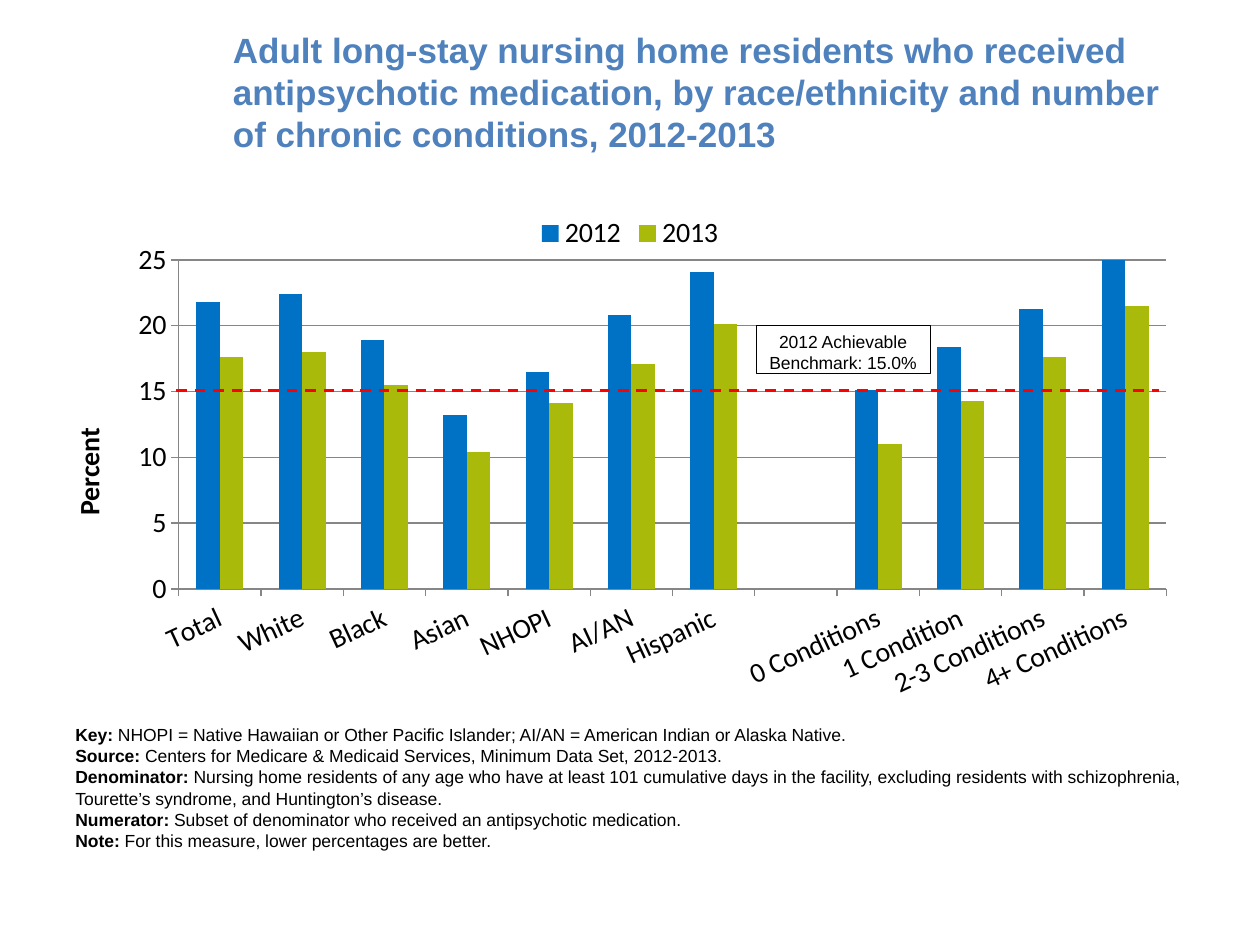
from lxml import etree
from pptx import Presentation
from pptx.chart.data import CategoryChartData
from pptx.dml.color import RGBColor
from pptx.enum import chart as ch, dml, shapes, text
from pptx.oxml import parse_xml
from pptx.oxml.ns import nsdecls, qn
from pptx.util import Inches, Pt

BLACK = RGBColor(0x00, 0x00, 0x00)
WHITE = RGBColor(0xFF, 0xFF, 0xFF)
GRAY = RGBColor(0x86, 0x86, 0x86)
RED = RGBColor(0xFF, 0x00, 0x00)
TITLE_BLUE = RGBColor(0x4F, 0x81, 0xBD)
BAR_BLUE = RGBColor(0x00, 0x72, 0xC6)
BAR_GREEN = RGBColor(0xAA, 0xBA, 0x0A)

CATEGORIES = ["Total", "White", "Black", "Asian", "NHOPI", "AI/AN", "Hispanic", "",
              "0 Conditions", "1 Condition", "2-3 Conditions", "4+ Conditions"]
SERIES = [
    ("2012", BAR_BLUE, [21.8, 22.4, 18.9, 13.2, 16.5, 20.8, 24.1, None, 15.1, 18.4, 21.3, 26]),
    ("2013", BAR_GREEN, [17.6, 18, 15.5, 10.4, 14.1, 17.1, 20.1, None, 11, 14.3, 17.6, 21.5]),
]
PLOT_LAYOUT = {"x": 0.102, "y": 0.113, "w": 0.871, "h": 0.637}

TITLE = ("Adult long-stay nursing home residents who received antipsychotic medication, "
         "by race/ethnicity and number of chronic conditions, 2012-2013")
NOTES = [
    ("Key:", " NHOPI = Native Hawaiian or Other Pacific Islander; "
             "AI/AN = American Indian or Alaska Native."),
    ("Source:", " Centers for Medicare & Medicaid Services, Minimum Data Set, 2012-2013."),
    ("Denominator: ", "Nursing home residents of any age who have at least 101 cumulative days "
                      "in the facility, excluding residents with schizophrenia, "
                      "Tourette’s syndrome, and Huntington’s disease."),
    ("Numerator:", " Subset of denominator who received an antipsychotic medication."),
    ("Note: ", "For this measure, lower percentages are better."),
]


def style_font(font, size, color=BLACK, bold=False, name="Arial"):
    """Set the look of a font."""
    font.name, font.size, font.bold = name, Pt(size), bold
    font.color.rgb = color


def add_run(p, words, size, color=BLACK, bold=False):
    """Add one styled run to a paragraph."""
    r = p.add_run()
    r.text = words
    style_font(r.font, size, color, bold)


def add_box(s, left, top, width, height, anchor=text.MSO_ANCHOR.TOP):
    """Add a wrapping text box and return its text frame."""
    sp = s.shapes.add_textbox(Inches(left), Inches(top), Inches(width), Inches(height))
    tf = sp.text_frame
    tf.word_wrap = True
    tf.vertical_anchor = anchor
    return tf


def add_notes(s):
    """Add the key, source and definitions below the chart."""
    tf = add_box(s, 0.5, 5.7, 9, 1.11)
    for i, (label, words) in enumerate(NOTES):
        p = tf.paragraphs[0] if i == 0 else tf.add_paragraph()
        add_run(p, label, 10, bold=True)
        add_run(p, words, 10)


def set_plot_layout(chart):
    """Fix the inner plot area as fractions of the chart."""
    area = chart.plots[0]._element.getparent()
    for old in area.findall(qn("c:layout")):
        area.remove(old)
    layout = parse_xml(f"<c:layout {nsdecls('c')}><c:manualLayout/></c:layout>")
    values = {"layoutTarget": "inner", "xMode": "edge", "yMode": "edge", **PLOT_LAYOUT}
    for tag, val in values.items():
        etree.SubElement(layout[0], qn(f"c:{tag}")).set("val", str(val))
    area.insert(0, layout)


def style_axes(chart):
    """Format both axes, the gridlines and the axis title."""
    cat, val = chart.category_axis, chart.value_axis
    for axis in (cat, val):
        style_font(axis.tick_labels.font, 16, name="Calibri")
        axis.format.line.color.rgb = GRAY
        axis.major_tick_mark = ch.XL_TICK_MARK.OUTSIDE
    cat.tick_labels.font._element.getparent().getparent().getparent().find(
        qn("a:bodyPr")).set("rot", "-1500000")
    val.minimum_scale, val.maximum_scale, val.major_unit = 0, 25, 5
    val.tick_labels.number_format = "0"
    val.tick_labels.number_format_is_linked = False
    val.major_gridlines.format.line.color.rgb = GRAY
    r = val.axis_title.text_frame.paragraphs[0].add_run()
    r.text = "Percent"
    style_font(r.font, 16, bold=True, name="Calibri")


def add_bar_chart(s):
    """Add the clustered columns for both years."""
    data = CategoryChartData()
    data.categories = CATEGORIES
    for name, _, values in SERIES:
        data.add_series(name, values)
    chart = s.shapes.add_chart(ch.XL_CHART_TYPE.COLUMN_CLUSTERED, Inches(0.5), Inches(1.6),
                               Inches(9), Inches(4.1), data).chart
    style_font(chart.font, 10)
    chart.has_title = False
    chart.has_legend = True
    chart.legend.position = ch.XL_LEGEND_POSITION.TOP
    chart.legend.include_in_layout = False
    style_font(chart.legend.font, 16, name="Calibri")
    plot = chart.plots[0]
    plot.gap_width, plot.overlap, plot.vary_by_categories = 150, 0, False
    for series, (_, color, _) in zip(plot.series, SERIES):
        series.format.fill.solid()
        series.format.fill.fore_color.rgb = color
        series.invert_if_negative = False
    style_axes(chart)
    set_plot_layout(chart)


def add_benchmark(s):
    """Add the dashed benchmark line and its label."""
    line = s.shapes.add_connector(shapes.MSO_CONNECTOR.STRAIGHT, Inches(1.4), Inches(3.1),
                                  Inches(9.2), Inches(3.1))
    line.line.color.rgb = RED
    line.line.width = Pt(1.5)
    line.line.dash_style = dml.MSO_LINE.DASH
    etree.SubElement(line._element.spPr, qn("a:effectLst"))
    sp = s.shapes.add_shape(shapes.MSO_SHAPE.RECTANGLE, Inches(6), Inches(2.58),
                            Inches(1.38), Inches(0.38))
    sp.shadow.inherit = False
    sp.fill.solid()
    sp.fill.fore_color.rgb = WHITE
    sp.line.color.rgb = BLACK
    sp.line.width = Pt(0.25)
    tf = sp.text_frame
    tf.word_wrap = True
    tf.vertical_anchor = text.MSO_ANCHOR.TOP
    p = tf.paragraphs[0]
    p.alignment = text.PP_ALIGN.CENTER
    add_run(p, "2012 Achievable Benchmark: 15.0%", 10)


def main():
    """Build the slide and save it."""
    prs = Presentation()
    prs.slide_width, prs.slide_height = Inches(10), Inches(7.5)
    s = prs.slides.add_slide(prs.slide_layouts[6])
    add_bar_chart(s)
    tf = add_box(s, 1.75, 0.25, 7.75, 0.95, text.MSO_ANCHOR.MIDDLE)
    add_run(tf.paragraphs[0], TITLE, 20, TITLE_BLUE, True)
    add_notes(s)
    add_benchmark(s)
    prs.save("out.pptx")


if __name__ == "__main__":
    main()
